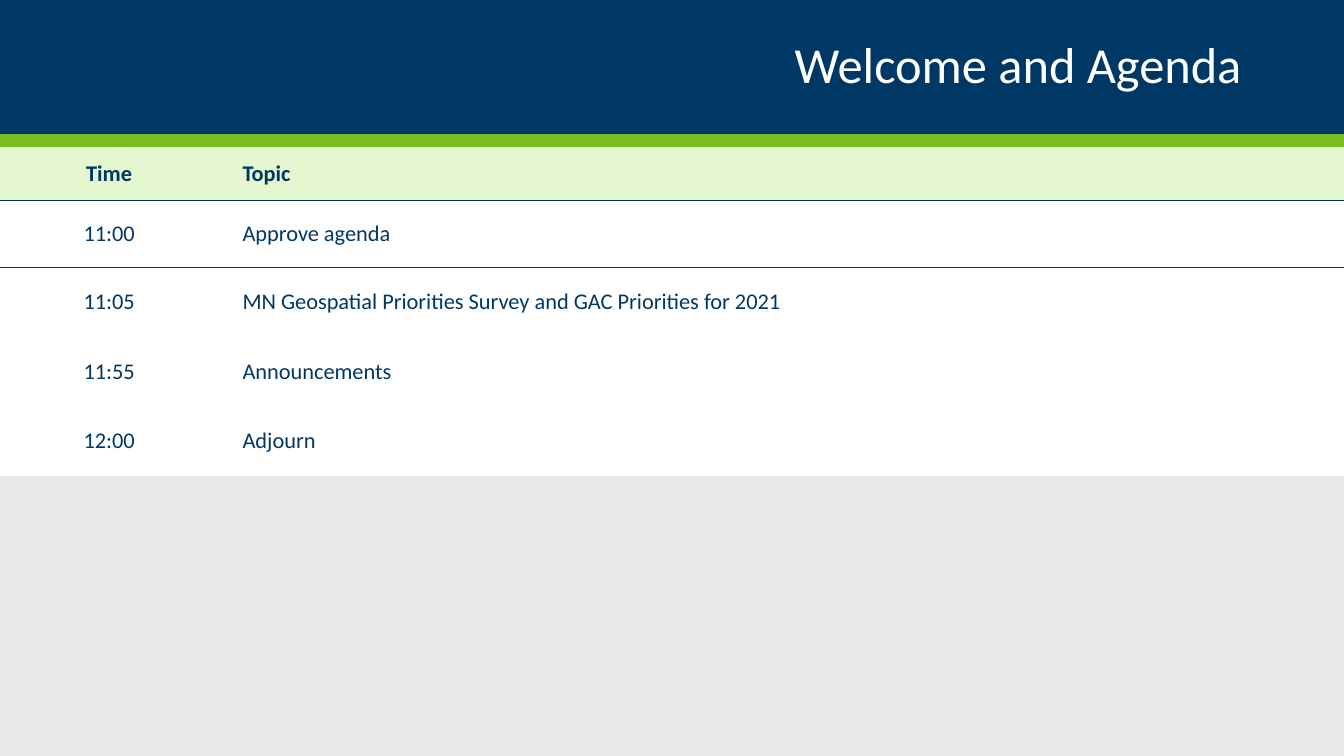
from dataclasses import dataclass

from lxml.etree import SubElement
from pptx import Presentation
from pptx.dml.color import RGBColor
from pptx.enum.shapes import MSO_SHAPE
from pptx.enum.text import MSO_ANCHOR, PP_ALIGN
from pptx.oxml.ns import qn
from pptx.util import Pt


@dataclass(frozen=True)
class Theme:
    """Colours, typeface and type sizes of the deck."""
    navy: str = "003865"
    green: str = "78BE21"
    pale_green: str = "E4F7CE"
    white: str = "FFFFFF"
    grey: str = "E8E8E8"
    font: str = "Calibri"
    title_size: int = 36
    body_size: int = 16


@dataclass(frozen=True)
class Box:
    """A rectangle in points."""
    left: float
    top: float
    width: float
    height: float

    def lengths(self):
        """Return the four lengths for a python-pptx call."""
        return [Pt(value) for value in (self.left, self.top, self.width, self.height)]


THEME = Theme()
PAGE = Box(0, 0, 960, 540)
HEADER = Box(0, 0, 960, 105.3)
AGENDA = Box(0, 105.3, 960, 234.7)
STRIPE_HEIGHT = 9.5
TIME_WIDTH = 156
ROW_HEIGHTS = [38.2, 47.5, 49.66, 49.67, 49.67]
NO_STYLE_NO_GRID = "{2D5ABB26-0587-4C30-8999-92F81FD0307C}"
ROWS = [
    ("Time", "Topic"),
    ("11:00", "Approve agenda"),
    ("11:05", "MN Geospatial Priorities Survey and GAC Priorities for 2021"),
    ("11:55", "Announcements"),
    ("12:00", "Adjourn"),
]


def apply_format(target, values):
    """Set each named attribute on the target."""
    for name, value in values.items():
        setattr(target, name, value)


def paint(fill, color):
    """Give a fill one solid colour."""
    fill.solid()
    fill.fore_color.rgb = RGBColor.from_string(color)


def write_text(para, text, align, size, color, bold=False):
    """Add one formatted span to a paragraph."""
    para.alignment = align
    span = para.add_run()
    span.text = text
    apply_format(span.font, {"name": THEME.font, "size": Pt(size), "bold": bold})
    span.font.color.rgb = RGBColor.from_string(color)


def add_band(page, box, color):
    """Draw a plain coloured rectangle."""
    band = page.shapes.add_shape(MSO_SHAPE.RECTANGLE, *box.lengths())
    band.shadow.inherit = False
    band.line.fill.background()
    paint(band.fill, color)


def add_header(page, box, title):
    """Draw the title band with its stripe and right-aligned title."""
    band_height = box.height - STRIPE_HEIGHT
    add_band(page, Box(box.left, box.top, box.width, band_height), THEME.navy)
    add_band(page, Box(box.left, box.top + band_height, box.width, STRIPE_HEIGHT), THEME.green)
    title_box = Box(box.left + 66, box.top + 12, box.width - 132, 72)
    frame = page.shapes.add_textbox(*title_box.lengths()).text_frame
    apply_format(frame, {"word_wrap": True, "vertical_anchor": MSO_ANCHOR.MIDDLE})
    para = frame.paragraphs[0]
    para.line_spacing = 0.9
    write_text(para, title, PP_ALIGN.RIGHT, THEME.title_size, THEME.white)


def add_border(cell, side):
    """Draw a one-point navy line on one side of a cell."""
    line = SubElement(cell._tc.get_or_add_tcPr(), qn(f"a:{side}"), w=str(Pt(1)))
    SubElement(SubElement(line, qn("a:solidFill")), qn("a:srgbClr"), val=THEME.navy)


def fill_cell(cell, text, row, column):
    """Format one agenda cell according to its row and column."""
    is_heading = row == 0
    margin = Pt(4.32 if is_heading else 8.64)
    apply_format(cell, {
        "vertical_anchor": MSO_ANCHOR.MIDDLE,
        "margin_left": Pt(17.28 if column else 8.64),
        "margin_right": Pt(8.64),
        "margin_top": margin,
        "margin_bottom": margin,
    })
    if row < 2:
        add_border(cell, "lnB" if is_heading else "lnT")
    paint(cell.fill, THEME.pale_green if is_heading else THEME.white)
    align = PP_ALIGN.LEFT if column else PP_ALIGN.CENTER
    write_text(cell.text_frame.paragraphs[0], text, align, THEME.body_size, THEME.navy, is_heading)


def add_agenda(page, box, rows):
    """Place the agenda table in its box."""
    frame = page.shapes.add_table(len(rows), 2, *box.lengths())
    table = frame.table
    apply_format(table, {"first_row": True, "horz_banding": False})
    next(frame._element.iter(qn("a:tableStyleId"))).text = NO_STYLE_NO_GRID
    for column, width in zip(table.columns, (TIME_WIDTH, box.width - TIME_WIDTH)):
        column.width = Pt(width)
    for row, (texts, height) in enumerate(zip(rows, ROW_HEIGHTS)):
        table.rows[row].height = Pt(height)
        for column, text in enumerate(texts):
            fill_cell(table.cell(row, column), text, row, column)


def main():
    """Build and save the agenda slide."""
    deck = Presentation()
    apply_format(deck, {"slide_width": Pt(PAGE.width), "slide_height": Pt(PAGE.height)})
    page = deck.slides.add_slide(deck.slide_layouts[6])
    paint(page.background.fill, THEME.grey)
    add_header(page, HEADER, "Welcome and Agenda")
    add_agenda(page, AGENDA, ROWS)
    deck.save("out.pptx")


if __name__ == "__main__":
    main()
